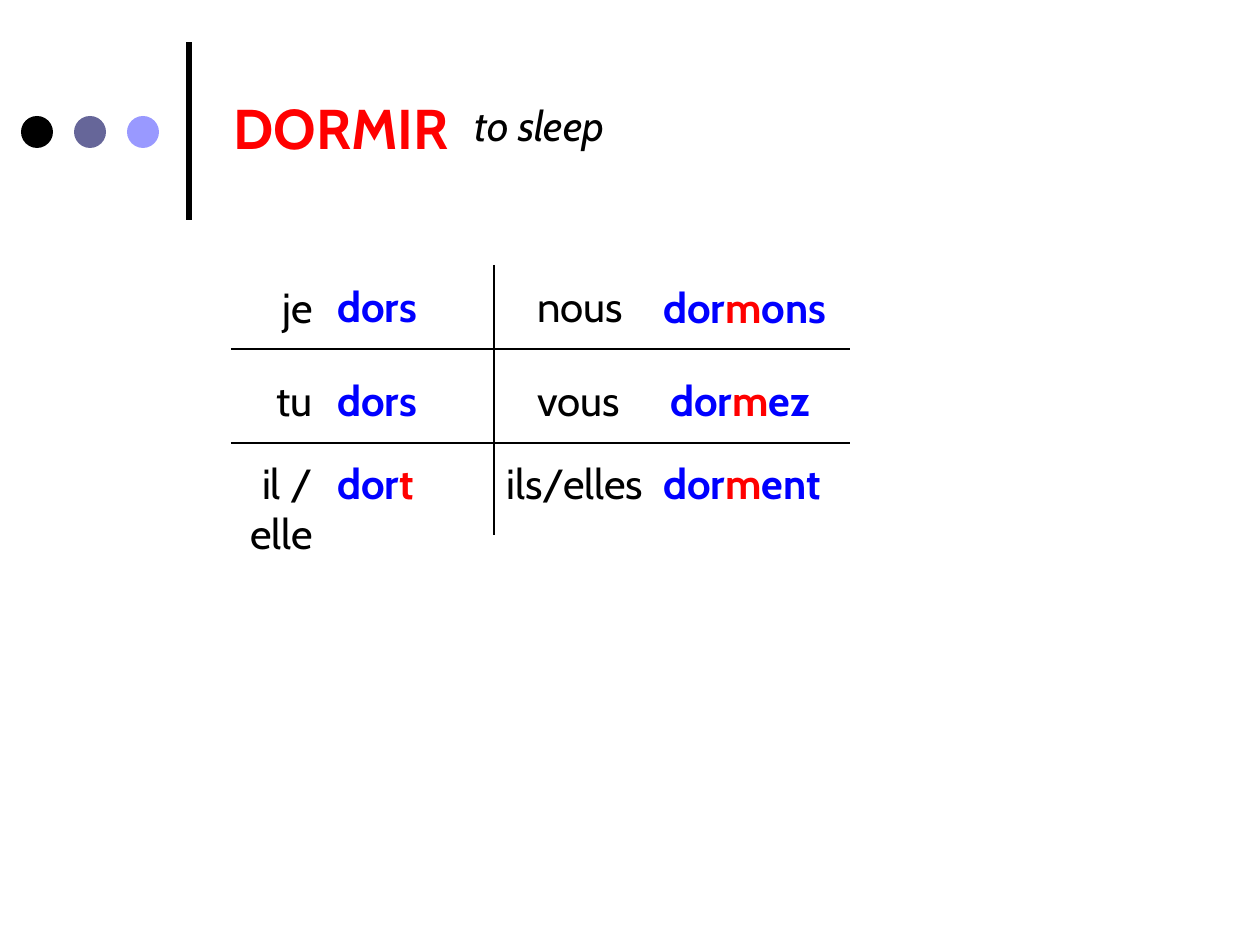
from lxml.etree import SubElement
from pptx import Presentation
from pptx.dml.color import RGBColor
from pptx.enum.shapes import MSO_CONNECTOR as Connector, MSO_SHAPE as Shape
from pptx.enum.text import MSO_AUTO_SIZE as AutoSize, PP_ALIGN as Align
from pptx.oxml.ns import qn
from pptx.util import Pt

EMU_PER_PX = 914400 / 126
FONT = "Cabin"
COLORS = {
    "black": "000000",
    "slate": "666699",
    "lavender": "9999FF",
    "red": "FF0000",
    "blue": "0000FF",
}
ROW_TOPS = (274, 368, 451)
ROW_HEIGHT = 64
SINGULAR = (
    ("je", 252, 275, ["dors"]),
    ("tu", 231, 368, ["dors"]),
    ("il / elle", 189, 451, ["dor", "t"]),
)
PLURAL = (
    ("nous", 525, 651, 275, ["dor", "m", "ons"]),
    ("vous", 525, 658, 368, ["dor", "m", "ez"]),
    ("ils/elles", 494, 651, 451, ["dor", "m", "ent"]),
)


def px(length):
    return round(length * EMU_PER_PX)


def color(name):
    return RGBColor.from_string(COLORS[name])


def add_line(slide, start, end, width=0.75):
    line = slide.shapes.add_connector(
        Connector.STRAIGHT, *(px(value) for value in start + end))
    line.line.color.rgb = color("black")
    line.line.width = Pt(width)
    SubElement(line._element.spPr, qn("a:effectLst"))


def add_dot(slide, left, fill):
    dot = slide.shapes.add_shape(Shape.OVAL, px(left), px(116), px(32), px(32))
    dot.shadow.inherit = False
    dot.fill.solid()
    dot.fill.fore_color.rgb = color(fill)
    dot.line.fill.background()


def add_text(slide, box, runs, size=24, bold=False, italic=False,
             align=Align.LEFT):
    shape = slide.shapes.add_textbox(*(px(value) for value in box))
    frame = shape.text_frame
    frame.word_wrap = True
    frame.auto_size = AutoSize.SHAPE_TO_FIT_TEXT
    paragraph = frame.paragraphs[0]
    paragraph.alignment = align
    for text, name in runs:
        run = paragraph.add_run()
        run.text = text
        font = run.font
        font.name = FONT
        font.size = Pt(size)
        font.bold = bold
        font.italic = italic
        font.color.rgb = color(name)


def add_verb(slide, left, top, width, parts):
    runs = list(zip(parts, ("blue", "red", "blue")))
    add_text(slide, (left, top, width, ROW_HEIGHT), runs, bold=True)


def add_heading(slide):
    add_line(slide, (189, 220), (189, 42), 3)
    for index, fill in enumerate(("black", "slate", "lavender")):
        add_dot(slide, 21 + 53 * index, fill)
    add_text(slide, (221, 87, 273, 81), [("DORMIR", "red")], 32, bold=True)
    add_text(slide, (462, 93, 262, ROW_HEIGHT), [("to sleep", "black")],
             italic=True)


def add_conjugation(slide):
    for y in (349, 443):
        add_line(slide, (231, y), (850, y))
    add_line(slide, (494, 265), (494, 535))
    for top, (pronoun, left, pronoun_top, parts) in zip(ROW_TOPS, SINGULAR):
        add_text(slide, (left, pronoun_top, 325 - left, ROW_HEIGHT),
                 [(pronoun, "black")], align=Align.RIGHT)
        add_verb(slide, 325, top, 158, parts)
    for top, (pronoun, left, verb_left, verb_top, parts) in zip(ROW_TOPS, PLURAL):
        add_text(slide, (left, top, 662 - left, ROW_HEIGHT),
                 [(pronoun, "black")])
        add_verb(slide, verb_left, verb_top, 252, parts)


def main():
    presentation = Presentation()
    presentation.slide_width = px(1260)
    presentation.slide_height = px(945)
    slide = presentation.slides.add_slide(presentation.slide_layouts[6])
    add_heading(slide)
    add_conjugation(slide)
    presentation.save("out.pptx")


if __name__ == "__main__":
    main()
